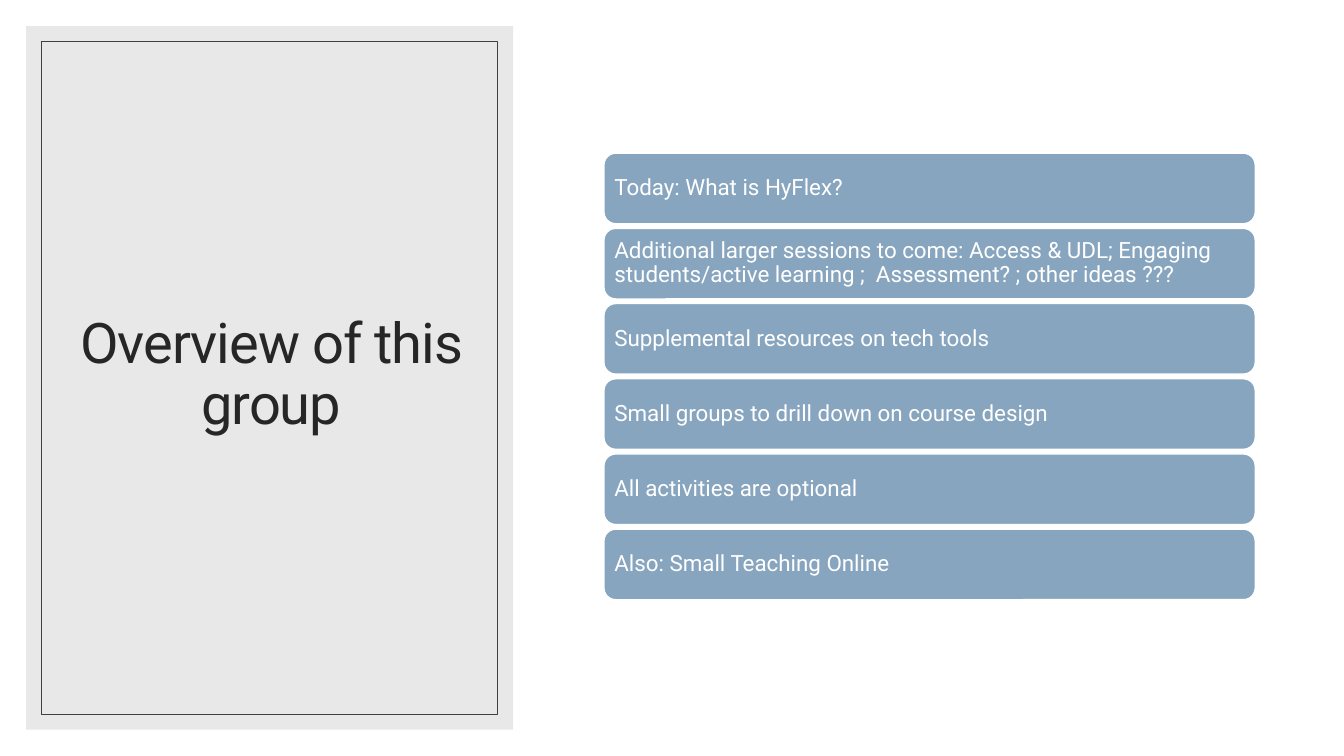
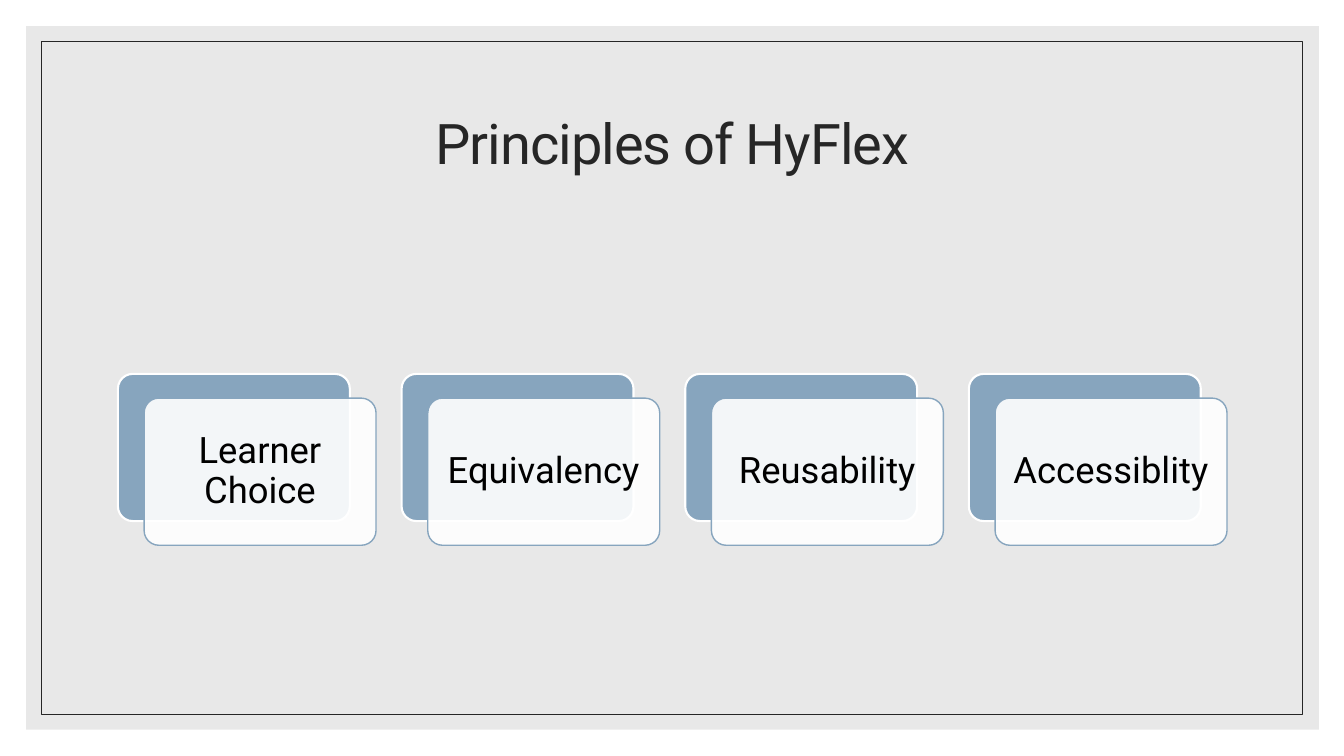
"""Build two slides on HyFlex teaching: the group overview and the principles."""
import lxml.etree
import pptx
import pptx.dml.color
import pptx.enum.shapes
import pptx.enum.text
import pptx.oxml.ns
import pptx.util

Inches = pptx.util.Inches
Pt = pptx.util.Pt
Shape = pptx.enum.shapes.MSO_SHAPE
Align = pptx.enum.text.PP_ALIGN


class SlideStyle:
    colours = {
        "panel": "D9D9D9",
        "frame": "404040",
        "ink": "262626",
        "accent": "87A5BE",
        "white": "FFFFFF",
        "black": "000000",
    }
    font = "Roboto"

    def __init__(self, deck):
        self.deck = deck
        self.page = None

    def colour(self, name):
        return pptx.dml.color.RGBColor.from_string(self.colours[name])

    def new_page(self):
        self.page = self.deck.slides.add_slide(self.deck.slide_layouts[6])

    def shape(self, kind, left, top, width, height, fill=None, opacity=100, line=None, weight=1):
        box = self.page.shapes.add_shape(
            kind, Inches(left), Inches(top), Inches(width), Inches(height))
        box.shadow.inherit = False
        if fill:
            box.fill.solid()
            box.fill.fore_color.rgb = self.colour(fill)
            if opacity < 100:
                tint = box.element.spPr.find(".//" + pptx.oxml.ns.qn("a:srgbClr"))
                alpha = lxml.etree.SubElement(tint, pptx.oxml.ns.qn("a:alpha"))
                alpha.set("val", str(opacity * 1000))
        else:
            box.fill.background()
        if line:
            box.line.color.rgb = self.colour(line)
            box.line.width = Pt(weight)
        else:
            box.line.fill.background()
        return box

    def label(self, box, text, size, colour, align, inset=None):
        frame = box.text_frame
        frame.word_wrap = True
        frame.vertical_anchor = pptx.enum.text.MSO_ANCHOR.MIDDLE
        if inset is not None:
            frame.margin_left = frame.margin_right = Inches(inset)
            frame.margin_top = frame.margin_bottom = Inches(inset)
        para = frame.paragraphs[0]
        para.alignment = align
        para.line_spacing = 0.9
        para.font.name = self.font
        para.font.size = Pt(size)
        para.font.color.rgb = self.colour(colour)
        span = para.add_run()
        span.text = text
        return span

    def panel(self, width, line):
        self.shape(Shape.RECTANGLE, 0.26, 0.26, width, 6.98, "panel", 60)
        self.shape(Shape.RECTANGLE, 0.41, 0.41, width - 0.31, 6.68, line=line, weight=0.5)

    def title(self, text, left, top, width, height):
        box = self.page.shapes.add_textbox(
            Inches(left), Inches(top), Inches(width), Inches(height))
        span = self.label(box, text, 40, "ink", Align.CENTER)
        span.font._element.set("spc", "-70")

    def bar(self, text, top):
        box = self.shape(Shape.ROUNDED_RECTANGLE, 5.99, top, 6.46, 0.7, "accent", line="white")
        self.label(box, text, 16, "white", Align.LEFT, 0.07)

    def card(self, text, left):
        size = (2.3, 1.46)
        back = self.shape(Shape.ROUNDED_RECTANGLE, left, 3.71, *size,
                          "accent", line="white", weight=1.5)
        front = self.shape(Shape.ROUNDED_RECTANGLE, left + 0.26, 3.95, *size,
                           "white", 90, line="accent")
        for box in (back, front):
            box.adjustments[0] = 0.1
        self.label(front, text, 26, "black", Align.CENTER, 0.11)


def spread(texts, first, last):
    step = (last - first) / (len(texts) - 1)
    return [(text, first + index * step) for index, text in enumerate(texts)]


def main():
    deck = pptx.Presentation()
    deck.slide_width = Inches(13.33)
    deck.slide_height = Inches(7.5)
    style = SlideStyle(deck)

    style.new_page()
    style.panel(4.83, "frame")
    style.title("Overview of this group", 0.63, 0.61, 4.12, 6.24)
    topics = [
        "Today: What is HyFlex?",
        "Additional larger sessions to come: Access & UDL; Engaging "
        "students/active learning ;  Assessment? ; other ideas ???",
        "Supplemental resources on tech tools",
        "Small groups to drill down on course design",
        "All activities are optional",
        "Also: Small Teaching Online",
    ]
    for text, top in spread(topics, 1.52, 5.25):
        style.bar(text, top)

    style.new_page()
    style.panel(12.82, "ink")
    style.title("Principles of HyFlex", 1.17, 0.7, 11, 1.5)
    principles = ["Learner Choice", "Equivalency", "Reusability", "Accessiblity"]
    for text, left in spread(principles, 1.17, 9.61):
        style.card(text, left)

    deck.save("out.pptx")


if __name__ == "__main__":
    main()
